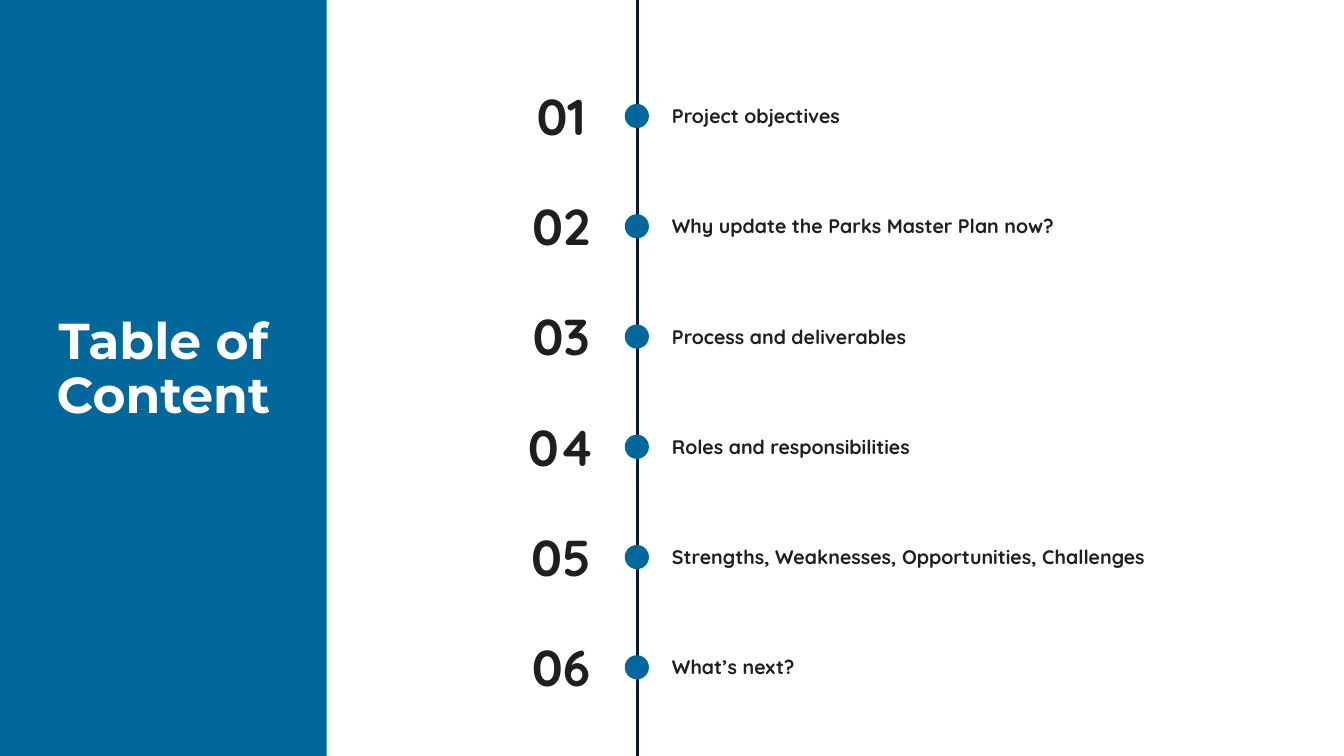
import pptx
import pptx.util
import pptx.dml.color
import pptx.enum.shapes
import pptx.enum.text
import pptx.oxml.ns
import lxml.etree

PX = 9525  # EMU per px, 96 px to the inch
COLORS = {"blue": "02679B", "navy": "0A1931", "ink": "1F1F1F", "white": "FFFFFF"}
SLIDE_W, SLIDE_H = 1280, 720
PANEL_W = 311
TIMELINE_X = 607
DOT = 23
FIRST_TOP, PITCH = 99, 105
TOPICS = [
    ("Project objectives", 467),
    ("Why update the Parks Master Plan now?", 467),
    ("Process and deliverables", 467),
    ("Roles and responsibilities", 467),
    ("Strengths, Weaknesses, Opportunities, Challenges", 518),
    ("What’s next?", 518),
]


def px(*lengths):
    return [pptx.util.Emu(length * PX) for length in lengths]


def color(name):
    return pptx.dml.color.RGBColor.from_string(COLORS[name])


def add_filled(slide, kind, left, top, width, height, fill):
    shape = slide.shapes.add_shape(kind, *px(left, top, width, height))
    shape.shadow.inherit = False
    shape.fill.solid()
    shape.fill.fore_color.rgb = color(fill)
    shape.line.fill.background()


def add_text(slide, text, left, top, width, height, *, size, font="Quicksand",
             ink="ink", centered=False, line_spacing=None):
    frame = slide.shapes.add_textbox(*px(left, top, width, height)).text_frame
    frame.word_wrap = True
    frame.auto_size = pptx.enum.text.MSO_AUTO_SIZE.SHAPE_TO_FIT_TEXT
    frame.margin_left = frame.margin_right = 0
    frame.margin_top = frame.margin_bottom = 0
    paragraph = frame.paragraphs[0]
    align = pptx.enum.text.PP_ALIGN
    paragraph.alignment = align.CENTER if centered else align.LEFT
    if line_spacing:
        paragraph.line_spacing = line_spacing
    run = paragraph.add_run()
    run.text = text
    run.font.name = font
    run.font.size = pptx.util.Pt(size)
    run.font.bold = True
    run.font.color.rgb = color(ink)


def add_timeline(slide):
    timeline = slide.shapes.add_connector(
        pptx.enum.shapes.MSO_CONNECTOR.STRAIGHT, *px(TIMELINE_X, 0, TIMELINE_X, SLIDE_H))
    timeline.line.color.rgb = color("navy")
    timeline.line.width = pptx.util.Pt(2)
    lxml.etree.SubElement(timeline._element.spPr, pptx.oxml.ns.qn("a:effectLst"))


def add_topic(slide, number, topic, width):
    top = FIRST_TOP + (number - 1) * PITCH
    add_filled(slide, pptx.enum.shapes.MSO_SHAPE.OVAL, 595, top, DOT, DOT, "blue")
    add_text(slide, f"{number:02}", 495, top - 18, 79, 59, size=36, centered=True)
    add_text(slide, topic, 640, top, width, DOT, size=14)


def main():
    deck = pptx.Presentation()
    deck.slide_width, deck.slide_height = px(SLIDE_W, SLIDE_H)
    slide = deck.slides.add_slide(deck.slide_layouts[6])

    # Title panel
    add_filled(slide, pptx.enum.shapes.MSO_SHAPE.RECTANGLE, 0, 0, PANEL_W, SLIDE_H, "blue")
    add_text(slide, "Table of Content", 0, 301, PANEL_W, 105, size=36,
             font="Montserrat", ink="white", centered=True, line_spacing=0.9)

    # Numbered topics along the timeline
    add_timeline(slide)
    for number, (topic, width) in enumerate(TOPICS, start=1):
        add_topic(slide, number, topic, width)

    deck.save("out.pptx")


if __name__ == "__main__":
    main()
